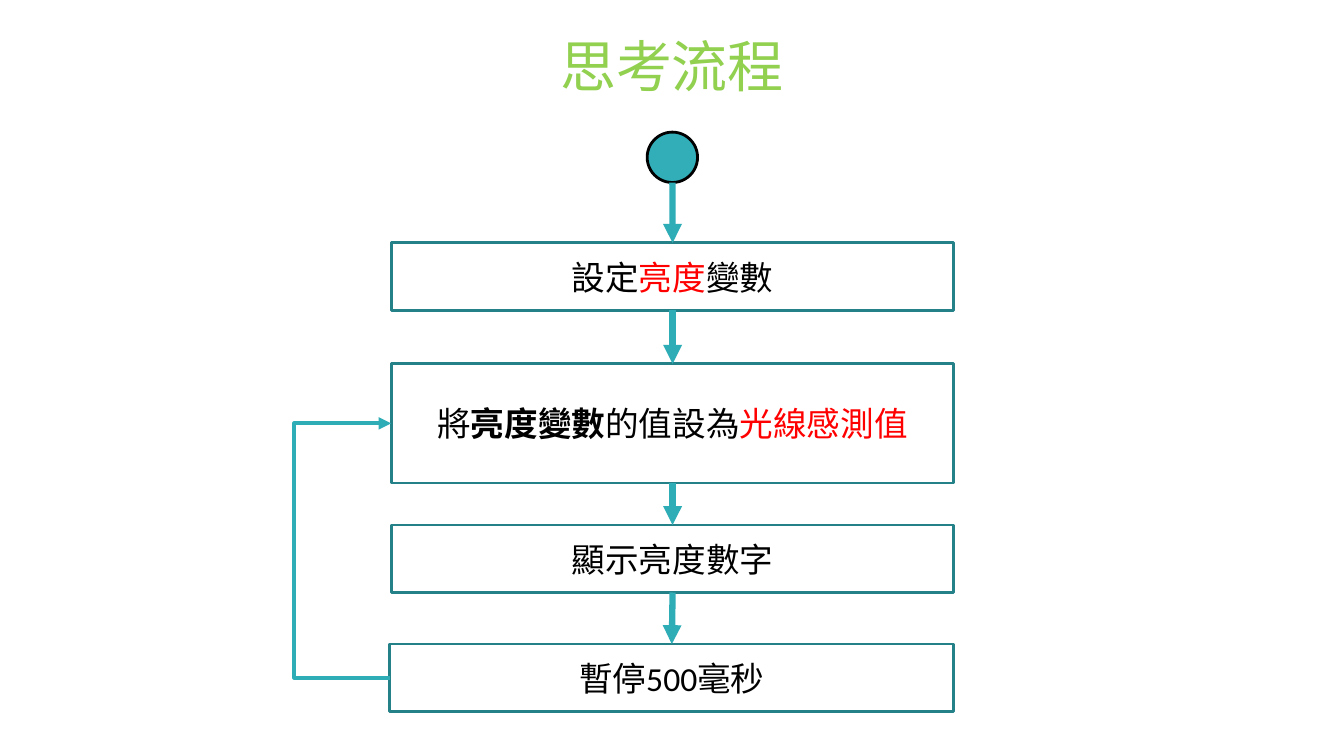
"""Build the brightness-sensing flowchart slide."""
from dataclasses import dataclass

from lxml import etree
from pptx import Presentation
from pptx.dml.color import RGBColor
from pptx.enum import shapes, text
from pptx.oxml import ns
from pptx.shapes.autoshape import Shape
from pptx.shapes.connector import Connector
from pptx.slide import Slide
from pptx.text.text import TextFrame
from pptx.util import Cm, Length, Pt


@dataclass(frozen=True)
class Theme:
    font: str = "Calibri"
    title_size: float = 40
    step_size: float = 24
    outline_width: float = 2
    arrow_width: float = 4.5
    loop_width: float = 3
    title: str = "92D050"
    ink: str = "000000"
    highlight: str = "FF0000"
    start: str = "32AEB8"
    outline: str = "258188"
    arrow: str = "2EADB7"


@dataclass(frozen=True)
class Phrase:
    wording: str
    color: str
    bold: bool = False


@dataclass(frozen=True)
class Step:
    phrases: tuple[Phrase, ...]
    top: float
    height: float = 1.7
    left: float = 9.86
    width: float = 14.18


THEME = Theme()
START_LEFT, START_TOP, START_SIZE = 16.31, 3.33, 1.27
LOOP_LEFT = 7.42
STEPS = (
    Step((Phrase("設定", THEME.ink), Phrase("亮度", THEME.highlight),
          Phrase("變數", THEME.ink)), 6.12),
    Step((Phrase("將", THEME.ink), Phrase("亮度變數", THEME.ink, True),
          Phrase("的值設為", THEME.ink),
          Phrase("光線感測值", THEME.highlight)), 9.17, height=3),
    Step((Phrase("顯示亮度數字", THEME.ink),), 13.23),
    Step((Phrase("暫停500毫秒", THEME.ink),), 16.23, left=9.82, width=14.22),
)


def write_text(frame: TextFrame, phrases: tuple[Phrase, ...], *, size: float) -> None:
    """Write centred phrases into a text frame."""
    frame.word_wrap = True
    frame.vertical_anchor = text.MSO_ANCHOR.MIDDLE
    paragraph = frame.paragraphs[0]
    paragraph.alignment = text.PP_ALIGN.CENTER
    for phrase in phrases:
        run = paragraph.add_run()
        run.text = phrase.wording
        run.font.name = THEME.font
        run.font.size = Pt(size)
        run.font.bold = phrase.bold
        run.font.color.rgb = RGBColor.from_string(phrase.color)


def draw_outline(shape: Shape, color: str) -> None:
    """Give a shape a plain outline without shadow."""
    shape.shadow.inherit = False
    shape.line.color.rgb = RGBColor.from_string(color)
    shape.line.width = Pt(THEME.outline_width)


def draw_title(slide: Slide) -> None:
    """Draw the slide heading."""
    heading = slide.shapes.add_textbox(Cm(2.33), Cm(0.58), Cm(29.21), Cm(2.11))
    write_text(heading.text_frame, (Phrase("思考流程", THEME.title),),
               size=THEME.title_size)


def draw_start(slide: Slide) -> Shape:
    """Draw the circle where the flow begins."""
    start = slide.shapes.add_shape(
        shapes.MSO_SHAPE.FLOWCHART_CONNECTOR,
        Cm(START_LEFT), Cm(START_TOP), Cm(START_SIZE), Cm(START_SIZE))
    start.fill.solid()
    start.fill.fore_color.rgb = RGBColor.from_string(THEME.start)
    draw_outline(start, THEME.ink)
    return start


def draw_step(slide: Slide, step: Step) -> Shape:
    """Draw one process box."""
    box = slide.shapes.add_shape(
        shapes.MSO_SHAPE.FLOWCHART_PROCESS,
        Cm(step.left), Cm(step.top), Cm(step.width), Cm(step.height))
    box.fill.background()
    draw_outline(box, THEME.outline)
    write_text(box.text_frame, step.phrases, size=THEME.step_size)
    return box


def draw_arrow(slide: Slide, kind: shapes.MSO_CONNECTOR, begin: tuple[Length, Length],
               end: tuple[Length, Length], width: float) -> Connector:
    """Draw a connector with a triangular head at its end."""
    arrow = slide.shapes.add_connector(kind, *begin, *end)
    arrow.line.color.rgb = RGBColor.from_string(THEME.arrow)
    arrow.line.width = Pt(width)
    etree.SubElement(arrow.line._get_or_add_ln(), ns.qn("a:tailEnd"), type="triangle")
    etree.SubElement(arrow._element.spPr, ns.qn("a:effectLst"))
    return arrow


def draw_down_arrow(slide: Slide, upper: Shape, lower: Shape) -> Connector:
    """Draw an arrow from one shape's bottom to the next box's top."""
    arrow = draw_arrow(
        slide, shapes.MSO_CONNECTOR.STRAIGHT,
        (upper.left + upper.width // 2, upper.top + upper.height),
        (lower.left + lower.width // 2, lower.top), THEME.arrow_width)
    arrow.end_connect(lower, 0)
    return arrow


def draw_loop(slide: Slide, last: Shape, target: Shape) -> None:
    """Draw the bent arrow that leads back to an earlier box."""
    loop = draw_arrow(
        slide, shapes.MSO_CONNECTOR.ELBOW,
        (last.left, last.top + last.height // 2),
        (target.left, target.top + target.height // 2), THEME.loop_width)
    bend = round((Cm(LOOP_LEFT) - last.left) / (target.left - last.left) * 100000)
    geometry = loop._element.spPr.find(ns.qn("a:prstGeom"))
    guides = geometry.find(ns.qn("a:avLst"))
    if guides is None:
        guides = etree.SubElement(geometry, ns.qn("a:avLst"))
    etree.SubElement(guides, ns.qn("a:gd"), name="adj1", fmla=f"val {bend}")


def main() -> None:
    """Build and save the slide."""
    deck = Presentation()
    deck.slide_width, deck.slide_height = Cm(33.87), Cm(19.05)
    slide = deck.slides.add_slide(deck.slide_layouts[6])
    draw_title(slide)
    start = draw_start(slide)
    boxes = [draw_step(slide, step) for step in STEPS]
    draw_down_arrow(slide, start, boxes[0])
    for upper, lower in zip(boxes, boxes[1:]):
        draw_down_arrow(slide, upper, lower).begin_connect(upper, 2)
    draw_loop(slide, boxes[-1], boxes[1])
    deck.save("out.pptx")


if __name__ == "__main__":
    main()
